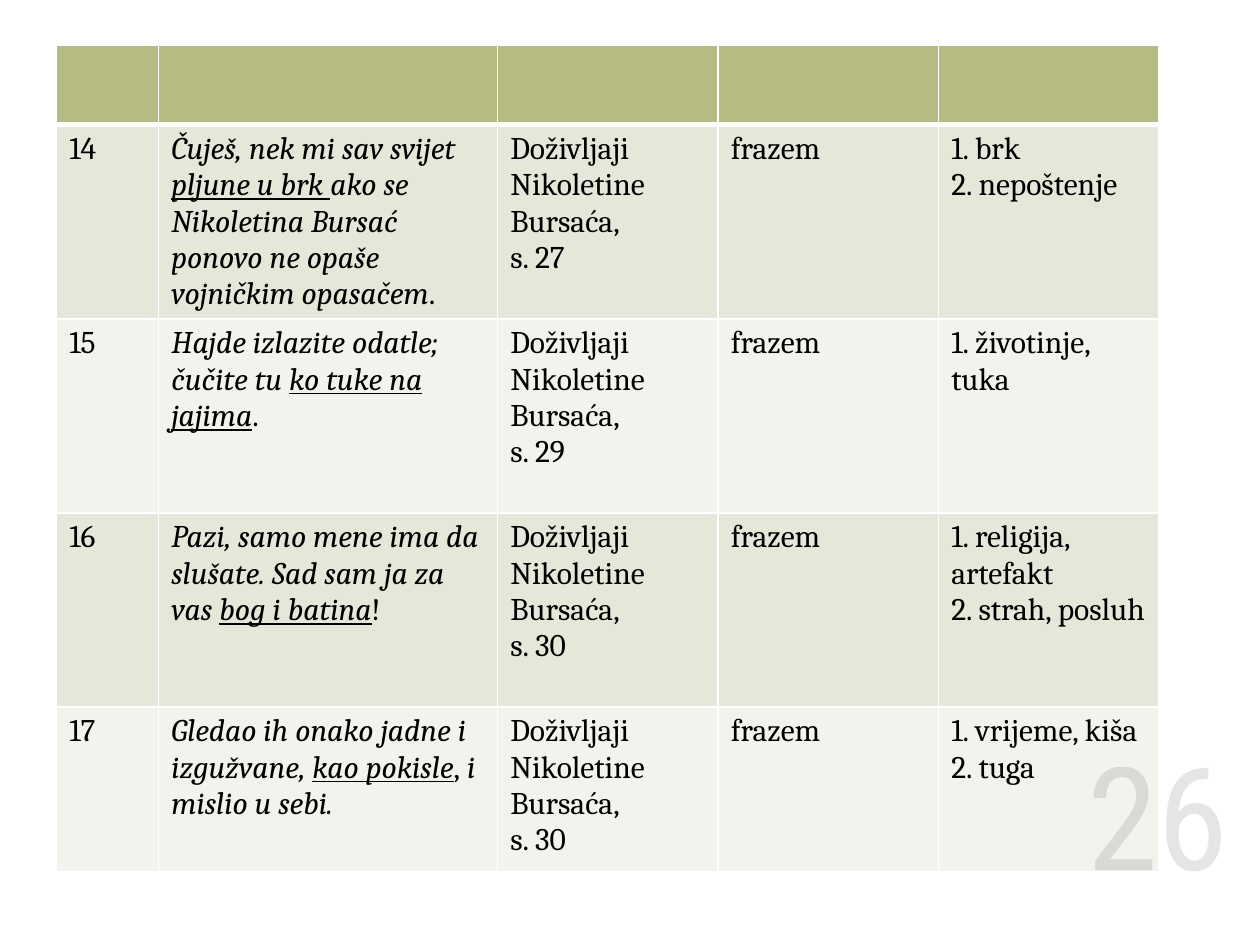
from lxml import etree
from pptx import Presentation
from pptx import util as u
from pptx.dml.color import RGBColor
from pptx.enum import text
from pptx.oxml.ns import qn

# Content: number, quote as (words, style), page, meanings; i italic, u underlined
BOOK = "Doživljaji Nikoletine Bursaća,"
KIND = "frazem"
ROWS = [
    ("14", [("Čuješ, nek mi sav svijet ", "i"), ("pljune u brk ", "iu"),
            ("ako se Nikoletina Bursać ponovo ne opaše vojničkim opasačem", "i"),
            (".", "")],
     "s. 27", ["1. brk", "2. nepoštenje"]),
    ("15", [("Hajde izlazite odatle; čučite tu ", "i"),
            ("ko tuke na jajima", "iu"), (".", "")],
     "s. 29", ["1. životinje, tuka"]),
    ("16", [("Pazi, samo mene ima da slušate. Sad sam ja za vas ", "i"),
            ("bog i batina", "iu"), ("!", "")],
     "s. 30", ["1. religija, artefakt", "2. strah, posluh"]),
    ("17", [("Gledao ih onako jadne i izgužvane, ", "i"), ("kao pokisle", "iu"),
            (",", ""), (" i mislio u sebi.", "i")],
     "s. 30", ["1. vrijeme, kiša", "2. tuga"]),
]
PAGE = "26"

# Format
WIDTHS = [0.81, 2.69, 1.75, 1.75, 1.75]
HEIGHTS = [0.63, 1.54, 1.54, 1.54, 1.31]
HEAD, BANDS = "B5BB83", ["E5E7D9", "F3F3ED"]
LINE, INK = "FFFFFF", "000000"
BODY = {"name": "Cambria", "size": u.Pt(18)}
BIG = {"name": "Roboto Condensed", "size": u.Pt(82)}


def color(form, tone):
    form.rgb = RGBColor.from_string(tone)


def add_run(para, words, form, style=""):
    run = para.add_run()
    run.text = words
    look = {**form, "italic": "i" in style, "underline": "u" in style}
    for key, val in look.items():
        setattr(run.font, key, val)
    color(run.font.color, INK)
    return run


def write(cell, paras):
    frame = cell.text_frame
    for i, runs in enumerate(paras):
        para = frame.add_paragraph() if i else frame.paragraphs[0]
        for words, style in runs:
            add_run(para, words, BODY, style)


def paint(cell, tone, top, bottom):
    cell.fill.solid()
    color(cell.fill.fore_color, tone)
    props = cell._tc.get_or_add_tcPr()
    sides = {"lnL": 1, "lnR": 1, "lnT": top, "lnB": bottom}
    for i, (side, wide) in enumerate(sides.items()):
        line = etree.Element(qn("a:" + side), w=str(u.Pt(wide)))
        fill = etree.SubElement(line, qn("a:solidFill"))
        etree.SubElement(fill, qn("a:srgbClr"), val=LINE)
        props.insert(i, line)


show = Presentation()
show.slide_width, show.slide_height = u.Inches(10), u.Inches(7.5)
slide = show.slides.add_slide(show.slide_layouts[6])

# Table of phrases
table = slide.shapes.add_table(
    len(HEIGHTS), len(WIDTHS), u.Inches(0.45), u.Inches(0.36),
    u.Inches(sum(WIDTHS)), u.Inches(sum(HEIGHTS))).table
for col, wide in zip(table.columns, WIDTHS):
    col.width = u.Inches(wide)
for row, high in zip(table.rows, HEIGHTS):
    row.height = u.Inches(high)

for r, row in enumerate(table.rows):
    tone = BANDS[(r - 1) % 2] if r else HEAD
    for cell in row.cells:
        paint(cell, tone, 3 if r == 1 else 1, 1 if r else 3)

for r, (num, quote, page, notes) in enumerate(ROWS, 1):
    parts = [[[(num, "")]], [quote], [[(BOOK, "")], [(page, "")]],
             [[(KIND, "")]], [[(note, "")] for note in notes]]
    for c, paras in enumerate(parts):
        write(table.cell(r, c), paras)

# Pale page number
box = slide.shapes.add_textbox(*map(u.Inches, (8.23, 5.99, 1.62, 0.93)))
frame = box.text_frame
frame.word_wrap = True
frame.vertical_anchor = text.MSO_ANCHOR.MIDDLE
para = frame.paragraphs[0]
para.alignment = text.PP_ALIGN.RIGHT
run = add_run(para, PAGE, BIG)
tint = run.font._rPr.find(".//" + qn("a:srgbClr"))
etree.SubElement(tint, qn("a:alpha"), val="10000")

show.save("out.pptx")
